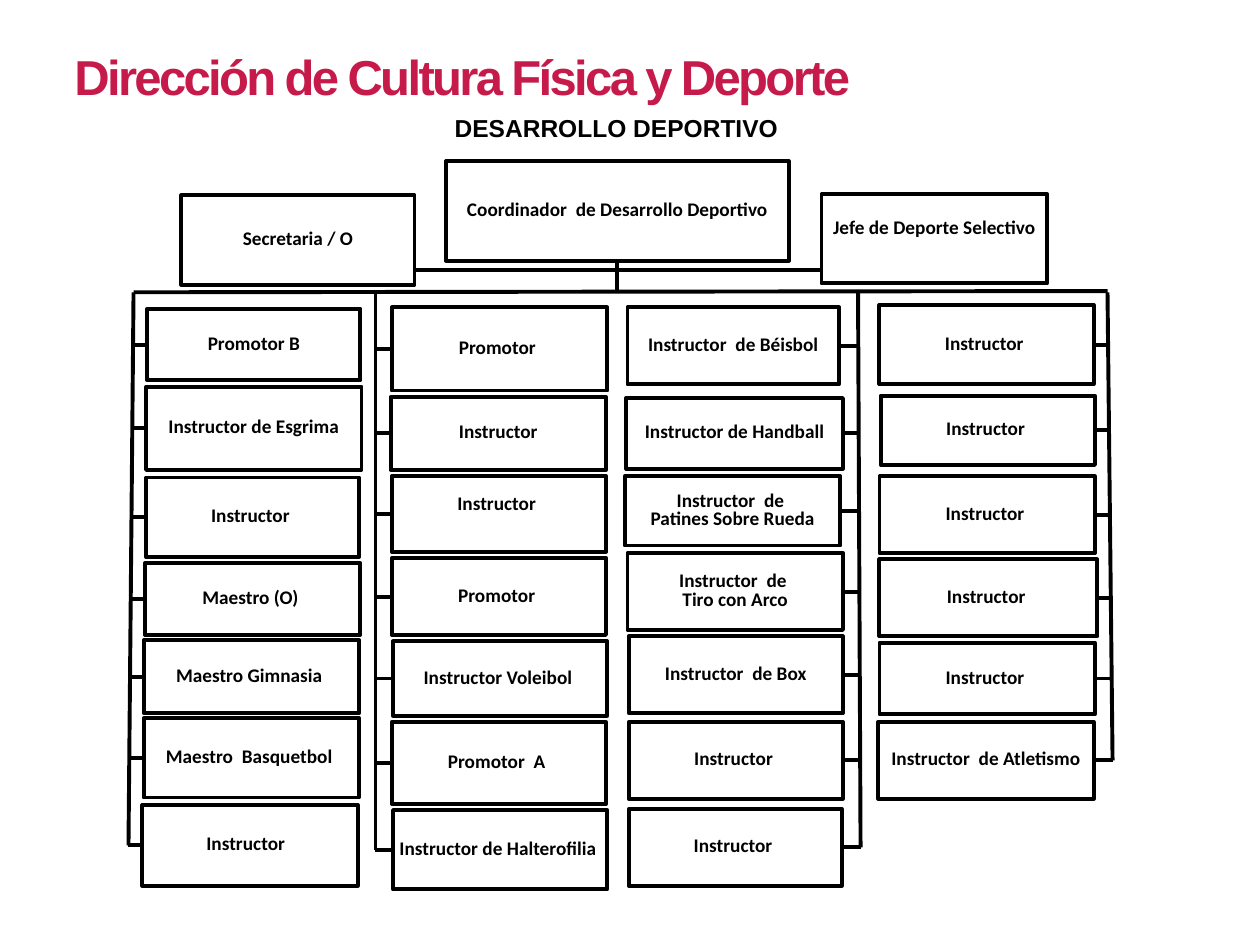
from dataclasses import dataclass

from lxml import etree
from pptx import Presentation
from pptx.dml.color import RGBColor
from pptx.enum.shapes import MSO_CONNECTOR, MSO_SHAPE
from pptx.enum.text import MSO_ANCHOR, MSO_AUTO_SIZE, PP_ALIGN
from pptx.oxml.ns import qn
from pptx.util import Inches, Pt

BLACK = RGBColor(0x00, 0x00, 0x00)
WHITE = RGBColor(0xFF, 0xFF, 0xFF)
CRIMSON = RGBColor(0xC5, 0x1A, 0x4A)
LINE_WIDTH = Pt(2.25)
BUS_TOP = 2.32
LEFT_SIDE, BOTTOM_SIDE, RIGHT_SIDE = 1, 2, 3


@dataclass(frozen=True)
class Post:
    label: str
    left: float
    top: float
    width: float
    height: float
    lift: float = 0  # extra bottom inset that raises the label

    @property
    def middle(self) -> float:
        return self.top + self.height / 2


@dataclass(frozen=True)
class Branch:
    """A column of posts hanging from one, possibly leaning, vertical line."""
    top_x: float
    bottom_x: float
    side: int
    posts: tuple[Post, ...]


COORDINATOR = Post("Coordinador  de Desarrollo Deportivo", 3.54, 1.28, 2.72, 0.79)
SECRETARY = Post("Secretaria / O", 1.44, 1.55, 1.85, 0.71)
SELECTIVE_HEAD = Post("Jefe de Deporte Selectivo", 6.52, 1.54, 1.79, 0.71, lift=0.15)

BRANCHES = (
    Branch(1.06, 1.02, LEFT_SIDE, (
        Post("Promotor B", 1.17, 2.45, 1.69, 0.57),
        Post("Instructor de Esgrima", 1.16, 3.07, 1.71, 0.66),
        Post("Instructor ", 1.16, 3.79, 1.69, 0.63),
        Post("Maestro (O) ", 1.15, 4.47, 1.71, 0.57),
        Post("Maestro Gimnasia ", 1.14, 5.08, 1.71, 0.58),
        Post("Maestro  Basquetbol ", 1.14, 5.7, 1.71, 0.63),
        Post("Instructor  ", 1.13, 6.39, 1.71, 0.64),
    )),
    Branch(2.98, 2.98, LEFT_SIDE, (
        Post("Promotor ", 3.11, 2.44, 1.71, 0.66),
        Post("Instructor", 3.1, 3.15, 1.71, 0.58),
        Post("Instructor ", 3.11, 3.78, 1.7, 0.6, lift=0.15),
        Post("Promotor ", 3.11, 4.43, 1.7, 0.61),
        Post("Instructor Voleibol ", 3.12, 5.09, 1.7, 0.59),
        Post("Promotor  A ", 3.11, 5.73, 1.7, 0.65),
        Post("Instructor de Halterofilia ", 3.12, 6.43, 1.7, 0.63),
    )),
    Branch(6.81, 6.83, RIGHT_SIDE, (
        Post("Instructor  de Béisbol", 4.98, 2.44, 1.68, 0.61),
        Post("Instructor de Handball", 4.97, 3.16, 1.72, 0.56),
        Post("Instructor  de \nPatines Sobre Rueda", 4.96, 3.78, 1.71, 0.55),
        Post("Instructor  de \nTiro con Arco", 4.98, 4.39, 1.71, 0.61),
        Post("Instructor  de Box", 4.99, 5.05, 1.7, 0.61),
        Post("Instructor ", 4.99, 5.73, 1.7, 0.61),
        Post("Instructor ", 4.99, 6.42, 1.69, 0.61),
    )),
    Branch(8.79, 8.83, RIGHT_SIDE, (
        Post("Instructor ", 6.98, 2.42, 1.7, 0.63),
        Post("Instructor ", 6.99, 3.14, 1.7, 0.55),
        Post("Instructor ", 6.98, 3.78, 1.71, 0.61),
        Post("Instructor ", 6.98, 4.44, 1.73, 0.61),
        Post("Instructor ", 6.98, 5.1, 1.71, 0.57),
        Post("Instructor  de Atletismo", 6.97, 5.73, 1.71, 0.61),
    )),
)


def write(frame, text: str, *, size: float, font: str, color=BLACK, align=PP_ALIGN.LEFT,
          anchor=MSO_ANCHOR.TOP, wrap=False, line_spacing=None, tracking=None) -> None:
    frame.word_wrap = wrap
    frame.vertical_anchor = anchor
    for index, line in enumerate(text.split("\n")):
        paragraph = frame.paragraphs[0] if index == 0 else frame.add_paragraph()
        paragraph.alignment = align
        if line_spacing:
            paragraph.line_spacing = line_spacing
        run = paragraph.add_run()
        run.text = line
        run.font.size = Pt(size)
        run.font.name = font
        run.font.bold = True
        run.font.color.rgb = color
        if tracking is not None:
            run.font._element.set("spc", str(round(tracking * 100)))


def draw_line(slide, start: tuple[float, float], end: tuple[float, float]):
    connector = slide.shapes.add_connector(
        MSO_CONNECTOR.STRAIGHT, *(Inches(value) for value in (*start, *end)))
    connector.line.color.rgb = BLACK
    connector.line.width = LINE_WIDTH
    etree.SubElement(connector._element.spPr, qn("a:effectLst"))
    return connector


def draw_post(slide, post: Post):
    box = slide.shapes.add_shape(
        MSO_SHAPE.RECTANGLE, Inches(post.left), Inches(post.top),
        Inches(post.width), Inches(post.height))
    box.shadow.inherit = False
    box.fill.solid()
    box.fill.fore_color.rgb = WHITE
    box.line.color.rgb = BLACK
    box.line.width = LINE_WIDTH
    box.text_frame.margin_bottom = Inches(0.05 + post.lift)
    write(box.text_frame, post.label, size=11, font="Calibri", align=PP_ALIGN.CENTER,
          anchor=MSO_ANCHOR.MIDDLE, line_spacing=0.8)
    return box


def draw_branch(slide, branch: Branch) -> None:
    bottom = branch.posts[-1].middle
    draw_line(slide, (branch.top_x, BUS_TOP), (branch.bottom_x, bottom))
    for post in branch.posts:
        box = draw_post(slide, post)
        share = (post.middle - BUS_TOP) / (bottom - BUS_TOP)
        bus_x = branch.top_x + share * (branch.bottom_x - branch.top_x)
        edge_x = post.left if branch.side == LEFT_SIDE else post.left + post.width
        stub = draw_line(slide, (bus_x, post.middle), (edge_x, post.middle))
        stub.end_connect(box, branch.side)


def draw_headings(slide) -> None:
    title = slide.shapes.title
    title.left, title.top = Inches(0.49), Inches(0.32)
    title.width, title.height = Inches(6.81), Inches(0.57)
    title.text_frame.auto_size = MSO_AUTO_SIZE.NONE
    write(title.text_frame, "Dirección de Cultura Física y Deporte", size=28, font="Arial",
          color=CRIMSON, wrap=True, tracking=-1.5)
    subtitle = slide.shapes.add_textbox(Inches(3.51), Inches(0.85), Inches(2.79), Inches(0.34))
    write(subtitle.text_frame, "DESARROLLO DEPORTIVO", size=14, font="Arial")


def main() -> None:
    presentation = Presentation()
    presentation.slide_width, presentation.slide_height = Inches(10), Inches(7.5)
    slide = presentation.slides.add_slide(presentation.slide_layouts[5])
    draw_headings(slide)

    draw_line(slide, (SECRETARY.left + SECRETARY.width, 2.14), (SELECTIVE_HEAD.left, 2.14))
    draw_line(slide, (BRANCHES[0].top_x, BUS_TOP), (BRANCHES[-1].top_x, 2.31))
    coordinator = draw_post(slide, COORDINATOR)
    draw_post(slide, SECRETARY)
    draw_post(slide, SELECTIVE_HEAD)
    trunk = draw_line(slide, (4.9, 2.07), (4.9, BUS_TOP))
    trunk.begin_connect(coordinator, BOTTOM_SIDE)

    for branch in BRANCHES:
        draw_branch(slide, branch)
    presentation.save("out.pptx")


if __name__ == "__main__":
    main()
